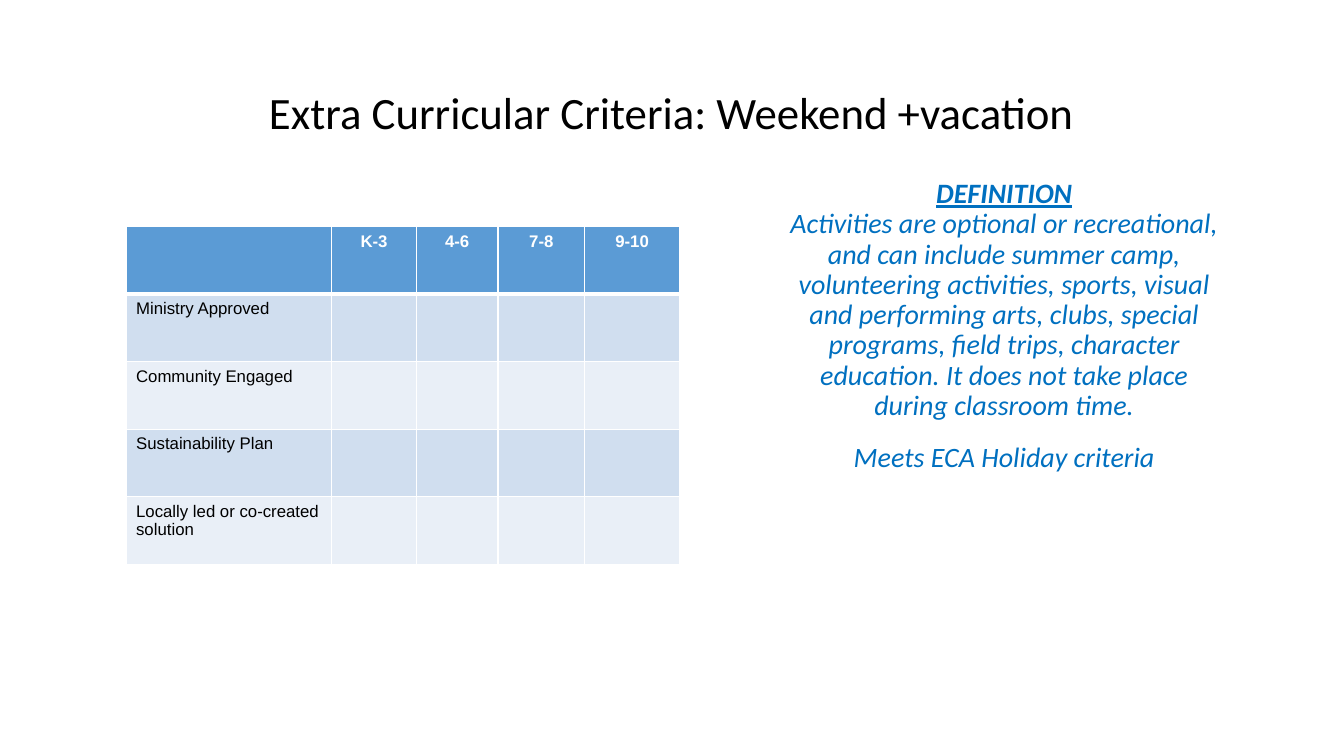
from lxml.etree import SubElement
from pptx import Presentation
from pptx.dml.color import RGBColor
from pptx.enum.text import MSO_ANCHOR as ANCHOR, MSO_AUTO_SIZE as FIT, PP_ALIGN as ALIGN
from pptx.oxml import parse_xml
from pptx.oxml.ns import nsdecls, qn
from pptx.util import Inches, Pt


def color(value):
    return RGBColor.from_string(value)


def write(p, text, size=12, font="Arial", fill="000000", bold=False, italic=False,
          underline=False, align=ALIGN.LEFT, spacing=1.0, after=0):
    p.alignment, p.line_spacing = align, spacing
    p.space_before, p.space_after = Pt(0), Pt(after)
    r = p.add_run()
    r.text = text
    f = r.font
    f.name, f.size, f.bold, f.italic, f.underline = font, Pt(size), bold, italic, underline
    f.color.rgb = color(fill)


prs = Presentation()
prs.slide_width, prs.slide_height = Inches(13.33), Inches(7.5)
s = prs.slides.add_slide(prs.slide_layouts[1])
title, body = s.placeholders

boxes = [
    (title, (0.45, 0.65, 12.42, 0.84), ANCHOR.MIDDLE),
    (body, (7.72, 1.68, 4.48, 4.97), ANCHOR.TOP),
]
for sp, box, anchor in boxes:
    sp.left, sp.top, sp.width, sp.height = map(Inches, box)
    tf = sp.text_frame
    tf.word_wrap, tf.auto_size, tf.vertical_anchor = True, FIT.NONE, anchor
    tf.margin_left = tf.margin_right = tf.margin_top = tf.margin_bottom = Inches(0.1)

write(title.text_frame.paragraphs[0], "Extra Curricular Criteria: Weekend +vacation",
      size=32, font="Calibri", align=ALIGN.CENTER, spacing=1.15)

definition = [
    ("DEFINITION", True, 0),
    ("Activities are optional or recreational, and can include summer camp, "
     "volunteering activities, sports, visual and performing arts, clubs, special "
     "programs, field trips, character education. It does not take place during "
     "classroom time.", False, 16),
    ("Meets ECA Holiday criteria", False, 16),
]
tf = body.text_frame
for i, (text, heading, after) in enumerate(definition):
    p = tf.add_paragraph() if i else tf.paragraphs[0]
    write(p, text, size=20, font="Calibri", fill="0070C0", bold=heading, italic=True,
          underline=heading, align=ALIGN.CENTER, spacing=0.9, after=after)
    pPr = p._p.get_or_add_pPr()
    pPr.set("marL", "0")
    pPr.set("indent", "0")
    SubElement(pPr, qn("a:buNone"))

grades = ["", "K-3", "4-6", "7-8", "9-10"]
criteria = ["Ministry Approved", "Community Engaged", "Sustainability Plan",
            "Locally led or co-created solution"]
rows = [grades] + [[name] + [""] * 4 for name in criteria]
widths = [2.04, 0.84, 0.81, 0.86, 0.94]
row_height = 0.67

frame = s.shapes.add_table(len(rows), len(widths), Inches(1.25), Inches(2.25),
                           Inches(sum(widths)), Inches(row_height * len(rows)))
table = frame.table
for column, width in zip(table.columns, widths):
    column.width = Inches(width)

for i, row in enumerate(rows):
    header = i == 0
    table.rows[i].height = Inches(row_height)
    for j, text in enumerate(row):
        cell = table.cell(i, j)
        cell.fill.solid()
        cell.fill.fore_color.rgb = color("5B9BD5" if header else ("E9EFF7", "D0DEEF")[i % 2])
        if text:
            write(cell.text_frame.paragraphs[0], text, bold=header,
                  fill="FFFFFF" if header else "000000",
                  align=ALIGN.CENTER if header else ALIGN.LEFT)
        tcPr = cell._tc.get_or_add_tcPr()
        for k, side in enumerate("LRTB"):
            thick = (header and side == "B") or (i == 1 and side == "T")
            tcPr.insert(k, parse_xml(
                f'<a:ln{side} {nsdecls("a")} w="{Pt(3 if thick else 1)}">'
                f'<a:solidFill><a:srgbClr val="FFFFFF"/></a:solidFill></a:ln{side}>'))

prs.save("out.pptx")
